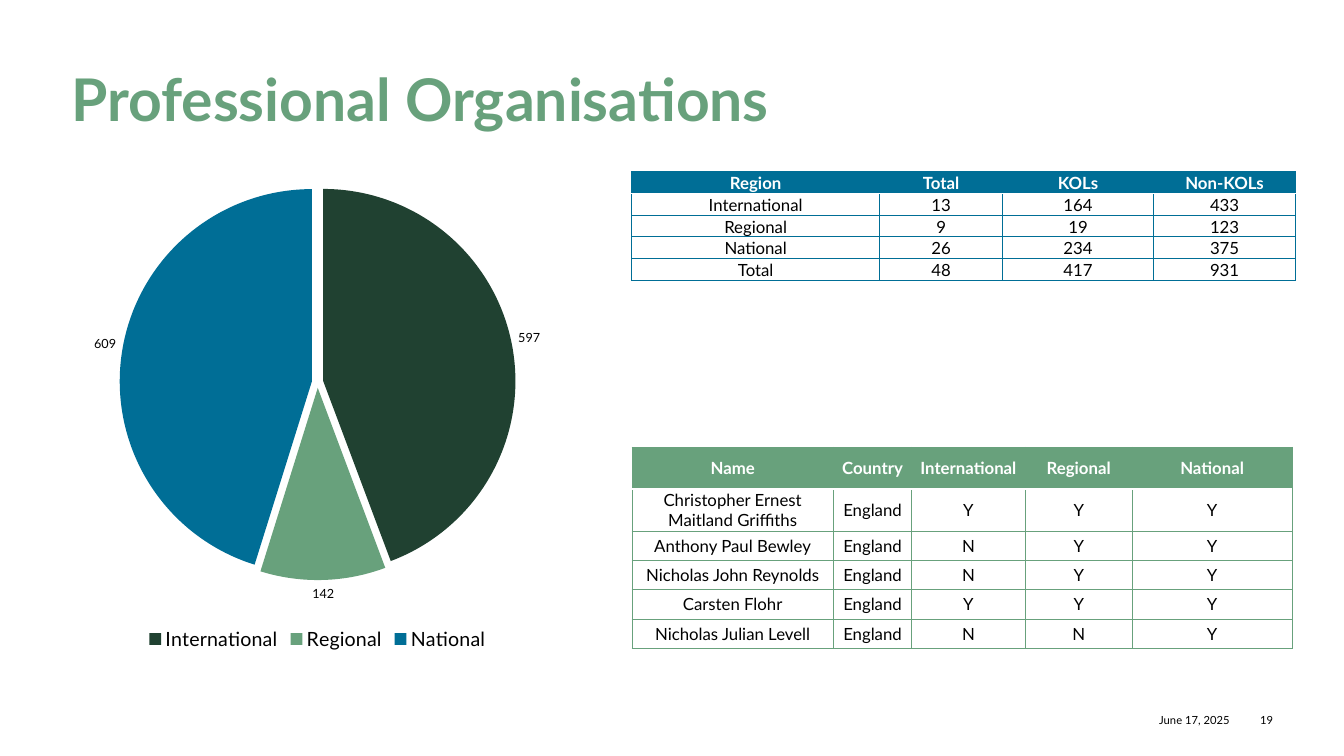
"""Build the Professional Organisations slide: a pie chart and two tables."""
import pptx
import pptx.chart.data
import pptx.dml.color
import pptx.enum.chart
import pptx.enum.text
import pptx.oxml
import pptx.oxml.ns
import pptx.util

Pt = pptx.util.Pt
ALIGN = pptx.enum.text.PP_ALIGN
ANCHOR = pptx.enum.text.MSO_ANCHOR
FONT = "Lato"
COLOURS = {"green": "68A17C", "blue": "006E96", "dark": "204131",
           "black": "000000", "white": "FFFFFF"}

HEADING = "Professional Organisations"
FOOTERS = [("June 17, 2025", 802, 76.4), ("19", 889.2, 20.2)]
MEMBERSHIPS = {"International": (597, "dark"), "Regional": (142, "green"),
               "National": (609, "blue")}
TABLES = [
    {"accent": "green", "anchor": ANCHOR.MIDDLE, "left": 451.4, "top": 319.4,
     "widths": [144, 55.8, 81.2, 76.4, 114.2],
     "heights": [29.9, 29.9, 21, 21, 21, 21],
     "rows": [("Name", "Country", "International", "Regional", "National"),
              ("Christopher Ernest Maitland Griffiths", "England", "Y", "Y", "Y"),
              ("Anthony Paul Bewley", "England", "N", "Y", "Y"),
              ("Nicholas John Reynolds", "England", "N", "Y", "Y"),
              ("Carsten Flohr", "England", "Y", "Y", "Y"),
              ("Nicholas Julian Levell", "England", "N", "N", "Y")]},
    {"accent": "blue", "anchor": ANCHOR.BOTTOM, "left": 451.2, "top": 122.4,
     "widths": [177.2, 87.8, 107.8, 101.6],
     "heights": [15.55] * 5,
     "rows": [("Region", "Total", "KOLs", "Non-KOLs"),
              ("International", "13", "164", "433"),
              ("Regional", "9", "19", "123"),
              ("National", "26", "234", "375"),
              ("Total", "48", "417", "931")]},
]


def rgb(colour):
    return pptx.dml.color.RGBColor.from_string(COLOURS[colour])


def style_font(font, size, colour="black", bold=False):
    for name, value in {"name": FONT, "size": Pt(size), "bold": bold}.items():
        setattr(font, name, value)
    font.color.rgb = rgb(colour)


def write(frame, text, align, size, colour="black", bold=False):
    paragraph = frame.paragraphs[0]
    paragraph.alignment = align
    run = paragraph.add_run()
    run.text = text
    style_font(run.font, size, colour, bold)
    return paragraph


def clear_margins(holder):
    for side in ("left", "top", "right", "bottom"):
        setattr(holder, f"margin_{side}", 0)


def add_borders(cell, edges):
    properties = cell._tc.get_or_add_tcPr()
    for position, (side, (colour, width)) in enumerate(edges.items()):
        properties.insert(position, pptx.oxml.parse_xml(
            f'<a:ln{side} {pptx.oxml.ns.nsdecls("a")} w="{Pt(width)}"><a:solidFill>'
            f'<a:srgbClr val="{COLOURS[colour]}"/></a:solidFill></a:ln{side}>'))


def add_grid(slide, accent, anchor, left, top, widths, heights, rows):
    grid = slide.shapes.add_table(len(rows), len(widths), Pt(left), Pt(top),
                                  Pt(sum(widths)), Pt(sum(heights))).table
    grid.first_row = grid.horz_banding = False
    for column, width in zip(grid.columns, widths):
        column.width = Pt(width)
    for index, (row, height, texts) in enumerate(zip(grid.rows, heights, rows)):
        row.height = Pt(height)
        header = index == 0
        edges = dict.fromkeys("LRTB", (accent, 0.5))
        if index < 2:
            edges["B" if header else "T"] = ("white", 1)
        for cell, text in zip(row.cells, texts):
            clear_margins(cell)
            cell.vertical_anchor = anchor
            write(cell.text_frame, text, ALIGN.CENTER, 12,
                  "white" if header else "black", header)
            if header:
                cell.fill.solid()
                cell.fill.fore_color.rgb = rgb(accent)
            else:
                cell.fill.background()
            add_borders(cell, edges)


def add_pie(slide):
    data = pptx.chart.data.CategoryChartData()
    data.categories = list(MEMBERSHIPS)
    data.add_series("Series 1", [count for count, _ in MEMBERSHIPS.values()])
    chart = slide.shapes.add_chart(pptx.enum.chart.XL_CHART_TYPE.PIE, Pt(23), Pt(121.7),
                                   Pt(407.5), Pt(346.3), data).chart
    style_font(chart.font, 10)
    chart.has_title = False
    chart.has_legend = True
    chart.legend.position = pptx.enum.chart.XL_LEGEND_POSITION.BOTTOM
    chart.legend.include_in_layout = False
    style_font(chart.legend.font, 14)
    plot = chart.plots[0]
    plot.vary_by_categories = True
    series = plot.series[0]
    for index, (_, colour) in enumerate(MEMBERSHIPS.values()):
        fill = series.points[index].format.fill
        fill.solid()
        fill.fore_color.rgb = rgb(colour)
    series._element.find(pptx.oxml.ns.qn("c:dPt")).addprevious(pptx.oxml.parse_xml(
        f'<c:explosion {pptx.oxml.ns.nsdecls("c")} val="3"/>'))
    labels = series.data_labels
    labels.show_value = True
    labels.position = pptx.enum.chart.XL_LABEL_POSITION.OUTSIDE_END
    style_font(labels.font, 9)


def main():
    deck = pptx.Presentation()
    deck.slide_width, deck.slide_height = Pt(960), Pt(540)
    slide = deck.slides.add_slide(deck.slide_layouts[5])

    title = slide.shapes.title
    title.left, title.top, title.width, title.height = Pt(51), Pt(51), Pt(858), Pt(70.6)
    frame = title.text_frame
    clear_margins(frame)
    frame.auto_size = pptx.enum.text.MSO_AUTO_SIZE.NONE
    frame.vertical_anchor = ANCHOR.TOP
    write(frame, HEADING, ALIGN.LEFT, 42, "green", True).line_spacing = 0.89

    for text, left, width in FOOTERS:
        frame = slide.shapes.add_textbox(Pt(left), Pt(507), Pt(width), Pt(14.4)).text_frame
        clear_margins(frame)
        frame.word_wrap = True
        frame.vertical_anchor = ANCHOR.MIDDLE
        write(frame, text, ALIGN.RIGHT, 8)

    for content in TABLES:
        add_grid(slide, **content)
    add_pie(slide)
    deck.save("out.pptx")


if __name__ == "__main__":
    main()
